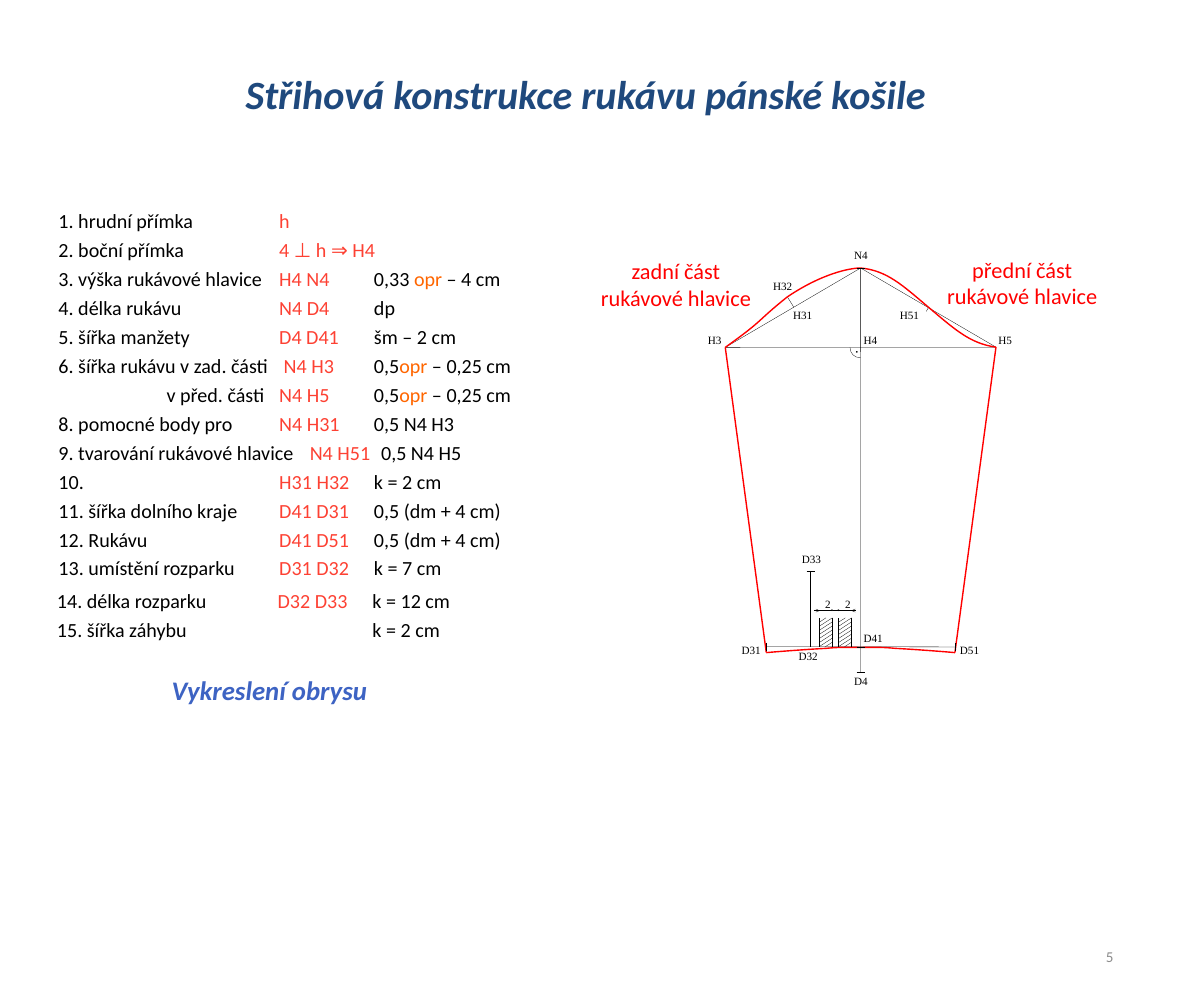
from lxml import etree
from pptx import Presentation
from pptx.dml.color import RGBColor
from pptx.enum.shapes import MSO_CONNECTOR, MSO_SHAPE
from pptx.enum.text import MSO_ANCHOR, MSO_AUTO_SIZE, PP_ALIGN
from pptx.oxml.ns import qn
from pptx.util import Pt

STRAIGHT, ELLIPSE = MSO_CONNECTOR.STRAIGHT, MSO_SHAPE.OVAL
LEFT, CENTER, RIGHT = PP_ALIGN.LEFT, PP_ALIGN.CENTER, PP_ALIGN.RIGHT
TOP, MIDDLE, NO_FIT = MSO_ANCHOR.TOP, MSO_ANCHOR.MIDDLE, MSO_AUTO_SIZE.NONE
BLACK, WHITE, RED = "000000", "FFFFFF", "FF0000"
SEGMENT_RED, ORANGE = "FD4133", "FF6600"
HAIR, THIN, OUTLINE = 0.25, 1, 1.25
NARROW, OFFSET, STANDARD = (1.4, 0.7, 1.4, 0.7), (0, 3.6, 7.2, 3.6), (7.2, 3.6, 7.2, 3.6)
ROW_LEFT, ROW_TOP, ROW_WIDTH, ROW_HEIGHT, ROW_PITCH = 51.1, 186.5, 518.4, 22.3, 25.97
STOPS = (198, 283)

TITLE = "Střihová konstrukce rukávu pánské košile"
STEPS = [
    ("1. hrudní přímka", "h", "", STOPS),
    ("2. boční přímka", "4 ⊥ h ⇒ H4", "", STOPS),
    ("3. výška rukávové hlavice", "H4 N4", "0,33 opr – 4 cm", STOPS),
    ("4. délka rukávu", "N4 D4", "dp", STOPS),
    ("5. šířka manžety", "D4 D41", "šm – 2 cm", STOPS),
    ("6. šířka rukávu v zad. části", "N4 H3", "0,5opr – 0,25 cm", (202, 283)),
    ("\tv před. části", "N4 H5", "0,5opr – 0,25 cm", (97, *STOPS)),
    ("8. pomocné body pro", "N4 H31", "0,5 N4 H3", STOPS),
    ("9. tvarování rukávové hlavice", "N4 H51", "0,5 N4 H5", (225.4, 289.4)),
    ("10.", "H31 H32", "k = 2 cm", STOPS),
    ("11. šířka dolního kraje", "D41 D31", "0,5 (dm + 4 cm)", STOPS),
    ("12. Rukávu", "D41 D51", "0,5 (dm + 4 cm)", STOPS),
    ("13. umístění rozparku", "D31 D32", "k = 7 cm", STOPS),
    ("14. délka rozparku", "D32 D33", "k = 12 cm", STOPS),
    ("15. šířka záhybu", "", "k = 2 cm", STOPS[1:]),
]
FIRST_FILLED = 13

AXIS = 772
N4, H4, D41, D4 = (AXIS, 240.5), (AXIS, 311.8), (AXIS, 581), (AXIS + 0.1, 603.4)
H3, H5, H32, H31 = (650.6, 311.7), (893.4, 311.5), (706.3, 266.4), (712.1, 275.8)
H51, D31, D51 = (833, 275.8), (687.4, 585.6), (856.6, 585.6)
D32, D33 = (727.2, 580.3), (727.2, 512.6)

POINT_LABELS = [
    ("N4", 766.1, 222.5), ("H4", 774.7, 298.8), ("H3", 635, 299.5),
    ("H5", 895.7, 299.5), ("H31", 711.4, 276.5), ("H32", 693.4, 250.6),
    ("H51", 807.1, 276.5), ("D33", 719.3, 495.4), ("D31", 665.3, 577.4),
    ("D32", 716.4, 582.5), ("D41", 774.7, 566.6), ("D4", 766.1, 605.5),
    ("D51", 861.1, 577.4), ("2", 740.2, 536.4), ("2", 758.2, 536.4),
]
PART_LABELS = [
    ("přední část rukávové hlavice", 838.8, 226.1, 163.4, 29.5),
    ("zadní část rukávové hlavice", 529.2, 227.5, 161.3, 53.3),
]
HEM = [((768.2, 581), (754.6, 580.3), (740.9, 581.8)),
       ((726.5, 582.5), (698.4, 584.6), D31)]
MIRRORED_HEM = [[(2 * AXIS - x, y) for x, y in part] for part in HEM]
CURVES = [
    (H3, [((686.9, 285.8), (677.5, 289.4), H32)], RED, OUTLINE),
    (H32, [((737.3, 245.5), (762.5, 240.5), N4)], RED, OUTLINE),
    (N4, [((795.6, 242.6), (810, 256.3), H51)], RED, OUTLINE),
    (H5, [((869.8, 308.2), (856.1, 295.2), H51)], RED, OUTLINE),
    (D41, HEM, RED, OUTLINE),
    (D41, MIRRORED_HEM, RED, OUTLINE),
    ((AXIS, 321.1), [((766.1, 321.1), (762.5, 316.8), (762.5, 311.8))], BLACK, HAIR),
]
SIDES = [(H3, D31), (D51, H5)]
GUIDES = [(N4, D4), (H3, H5), (N4, H3), (N4, H5), (H32, H31), (H51, (830.9, 279.4)),
          ((686.9, 580.3), (856.8, 580.5))]
LEVEL_TICKS = [N4, D41, D4, D33]
UPRIGHT_TICKS = [(686.9, 580.3), (856.8, 580.3), (726.5, 576.7)]
TICK = 3.6
PLEATS, PLEAT_WIDTH, PLEAT_TOP, PLEAT_BOTTOM = (735.1, 752.4), 11.5, 554.4, 580.3
HATCH_COUNT, HATCH_STEP, HATCH_SLOPE = 8, 3.65, 0.65
MEASURE_Y = 547.9
DOTS = [(768.2, 315.4), (751.7, 547.2), (745.9, 547.2)]


def color(hex_string):
    return RGBColor.from_string(hex_string)


def write(paragraph, text, size=18, font="Calibri", ink=BLACK, bold=False,
          italic=False, align=LEFT):
    run = paragraph.add_run()
    run.text = text
    run.font.size, run.font.name = Pt(size), font
    run.font.bold, run.font.italic = bold, italic
    run.font.color.rgb = color(ink)
    paragraph.alignment = align


def first_paragraph(shape, bounds, insets, anchor=TOP):
    shape.left, shape.top, shape.width, shape.height = map(Pt, bounds)
    frame = shape.text_frame
    frame.word_wrap, frame.auto_size, frame.vertical_anchor = True, NO_FIT, anchor
    (frame.margin_left, frame.margin_top,
     frame.margin_right, frame.margin_bottom) = map(Pt, insets)
    return frame.paragraphs[0]


def label(shapes, text, bounds, insets=(0, 0, 0, 0), anchor=TOP, **style):
    box = shapes.add_textbox(0, 0, 0, 0)
    write(first_paragraph(box, bounds, insets, anchor), text, **style)


def line(shapes, start, end, ink=BLACK, width=HAIR):
    connector = shapes.add_connector(STRAIGHT, *map(Pt, (*start, *end)))
    connector.line.color.rgb, connector.line.width = color(ink), Pt(width)
    etree.SubElement(connector._element.spPr, qn("a:effectLst"))


def curve(shapes, start, parts, ink, width):
    builder = shapes.build_freeform(*map(Pt, start))
    builder.add_line_segments([tuple(map(Pt, point)) for part in parts for point in part],
                              close=False)
    bend = builder.convert_to_shape()
    bend.shadow.inherit = False
    bend.fill.background()
    bend.line.color.rgb, bend.line.width = color(ink), Pt(width)
    legs = list(bend._element.iter(qn("a:lnTo")))
    for index in range(0, len(legs), 3):
        bezier = etree.SubElement(legs[index].getparent(), qn("a:cubicBezTo"))
        for leg in legs[index:index + 3]:
            bezier.append(leg[0])
            leg.getparent().remove(leg)


def step_row(shapes, index, task, segment, formula, stops):
    filled = index >= FIRST_FILLED
    box = shapes.add_textbox(0, 0, 0, 0)
    if filled:
        box.fill.solid()
        box.fill.fore_color.rgb = color(WHITE)
    bounds = (ROW_LEFT, ROW_TOP + index * ROW_PITCH, ROW_WIDTH, ROW_HEIGHT)
    paragraph = first_paragraph(box, bounds, OFFSET if filled else NARROW)
    tabs = etree.SubElement(paragraph._p.get_or_add_pPr(), qn("a:tabLst"))
    for stop in stops:
        etree.SubElement(tabs, qn("a:tab"), pos=str(int(Pt(stop))), algn="l")
    before, measure, after = formula.partition("opr")
    write(paragraph, task)
    for text, ink in ((segment, SEGMENT_RED), (before, BLACK)):
        if text:
            write(paragraph, "\t" + text, ink=ink)
    if measure:
        write(paragraph, measure, ink=ORANGE)
        write(paragraph, after)


def pleat(shapes, left):
    right = left + PLEAT_WIDTH
    for x in (left, right):
        line(shapes, (x, PLEAT_BOTTOM), (x, PLEAT_TOP), width=THIN)
    for index in range(HATCH_COUNT):
        level = PLEAT_TOP + 3.8 + index * HATCH_STEP
        start = left + max(0, level - PLEAT_BOTTOM) / HATCH_SLOPE
        end = min(right, left + (level - PLEAT_TOP) / HATCH_SLOPE)
        line(shapes, *((x, level - HATCH_SLOPE * (x - left)) for x in (end, start)))


def sleeve(shapes):
    for start, end in GUIDES:
        line(shapes, start, end)
    line(shapes, D32, D33, width=THIN)
    for start, end in SIDES:
        line(shapes, start, end, RED, OUTLINE)
    for bend in CURVES:
        curve(shapes, *bend)
    for x, y in LEVEL_TICKS:
        line(shapes, (x - TICK, y), (x + TICK, y))
    for x, y in UPRIGHT_TICKS:
        line(shapes, (x, y - TICK), (x, y + TICK))
    for left in PLEATS:
        pleat(shapes, left)
    first, last = PLEATS[0], PLEATS[1] + PLEAT_WIDTH
    line(shapes, (first - 5, MEASURE_Y), (last + 4.3, MEASURE_Y))
    line(shapes, (first, MEASURE_Y), (first + PLEAT_WIDTH, MEASURE_Y))
    for x, side in ((first, -1), (last, 1)):
        for rise in (-1.4, 1.4):
            line(shapes, (x, MEASURE_Y), (x + side * 3.3, MEASURE_Y + rise))
    for x, y in DOTS:
        dot = shapes.add_shape(ELLIPSE, *map(Pt, (x, y, 0.7, 0.7)))
        dot.shadow.inherit = False
        dot.fill.solid()
        dot.fill.fore_color.rgb = color(WHITE)
        dot.line.color.rgb, dot.line.width = color(BLACK), Pt(0.75)


def main():
    """Build the slide on drafting the sleeve of a men's shirt."""
    deck = Presentation()
    deck.slide_width, deck.slide_height = Pt(1080), Pt(900)
    shapes = deck.slides.add_slide(deck.slide_layouts[5]).shapes
    write(first_paragraph(shapes.title, (213.1, 58.3, 631.4, 51.1), STANDARD), TITLE,
          size=36, ink="1F497D", bold=True, italic=True)
    sleeve(shapes)
    for index, step in enumerate(STEPS):
        step_row(shapes, index, *step)
    for text, left, top in POINT_LABELS:
        label(shapes, text, (left, top, 2 + 5.6 * len(text), 11.5),
              size=10, font="Times New Roman")
    for text, *bounds in PART_LABELS:
        label(shapes, text, bounds, OFFSET, size=20, ink=RED, align=CENTER)
    label(shapes, "Vykreslení obrysu", (75.6, 603.4, 331.9, 39.6), NARROW,
          size=24, ink="3D63C3", bold=True, italic=True, align=CENTER)
    label(shapes, "5", (762.5, 834.5, 243.4, 48.2), STANDARD, MIDDLE,
          size=13.5, ink="8C8C8C", align=RIGHT)
    deck.save("out.pptx")


if __name__ == "__main__":
    main()
